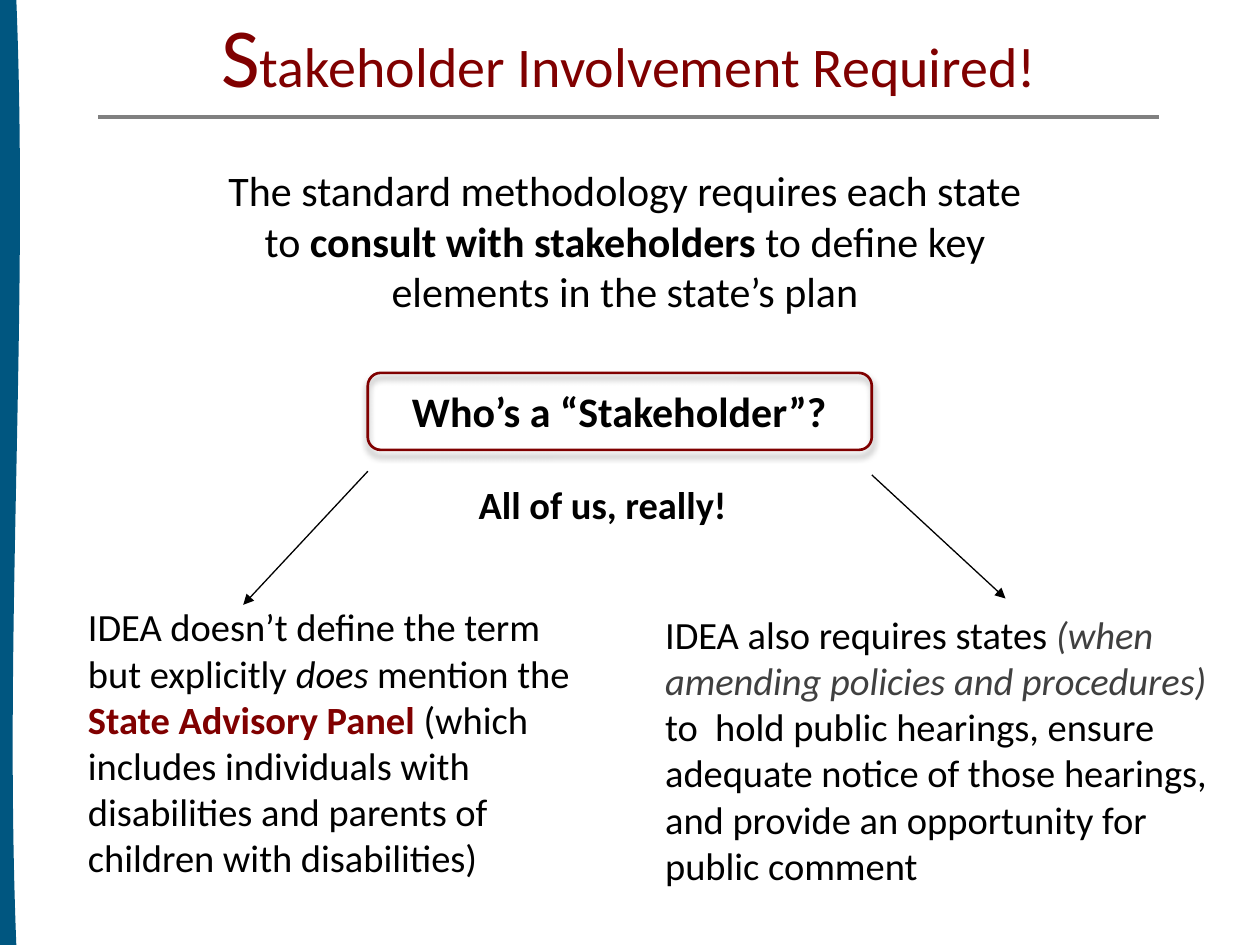
"""Build the slide on stakeholder involvement."""
from dataclasses import dataclass

from pptx import Presentation
from pptx.dml.color import RGBColor as Rgb
from pptx.enum.shapes import MSO_CONNECTOR as Link, MSO_SHAPE as Shape
from pptx.enum.text import MSO_ANCHOR as Anchor, PP_ALIGN as Align
from pptx.oxml import parse_xml
from pptx.oxml.ns import nsdecls, qn
from pptx.util import Pt


@dataclass(frozen=True)
class Theme:
    font: str = "Calibri"
    ink: str = "000000"
    red: str = "800000"
    gray: str = "404040"
    rule: str = "808080"
    blue: str = "005680"
    cap: int = 48
    title: int = 32
    lead: int = 24
    body: int = 22


THEME = Theme()


def make_tag(name, attrs="", inner=""):
    return parse_xml(f'<a:{name} {nsdecls("a")} {attrs}>{inner}</a:{name}>')


def add_run(para, text, size, color=THEME.ink, bold=False, italic=False):
    run = para.add_run()
    run.text = text
    font = run.font
    font.name, font.size = THEME.font, Pt(size)
    font.bold, font.italic = bold, italic
    font.color.rgb = Rgb.from_string(color)


def add_text(slide, place, size, runs, align=Align.LEFT, anchor=Anchor.TOP):
    box = slide.shapes.add_textbox(*map(Pt, place))
    frame = box.text_frame
    frame.word_wrap = True
    frame.vertical_anchor = anchor
    para = frame.paragraphs[0]
    para.alignment = align
    for text, style in runs:
        add_run(para, text, **{"size": size, **style})


def add_line(slide, start, end, color, width, arrow=False):
    line = slide.shapes.add_connector(
        Link.STRAIGHT, *map(Pt, (*start, *end)))
    line.line.color.rgb = Rgb.from_string(color)
    line.line.width = Pt(width)
    if arrow:
        line.line._get_or_add_ln().append(
            make_tag("tailEnd", 'type="triangle"'))
    line.element.spPr.append(make_tag("effectLst"))


def add_frame(slide, place):
    box = slide.shapes.add_shape(Shape.ROUNDED_RECTANGLE, *map(Pt, place))
    box.fill.background()
    box.line.color.rgb = Rgb.from_string(THEME.red)
    box.line.width = Pt(1.5)
    box.shadow.inherit = False
    shade = f'<a:srgbClr val="{THEME.ink}"><a:alpha val="40000"/></a:srgbClr>'
    attrs = (f'blurRad="{Pt(4)}" dist="{Pt(3)}" dir="5400000" '
             'rotWithShape="0"')
    box.element.spPr.find(qn("a:effectLst")).append(
        make_tag("outerShdw", attrs, shade))


def add_wave(slide, place):
    wave = slide.shapes.add_shape(Shape.WAVE, *map(Pt, place))
    wave.rotation = 270
    wave.fill.solid()
    wave.fill.fore_color.rgb = Rgb.from_string(THEME.blue)
    wave.line.fill.background()
    wave.shadow.inherit = False


def main():
    deck = Presentation()
    deck.slide_width, deck.slide_height = Pt(720), Pt(540)
    slide = deck.slides.add_slide(deck.slide_layouts[6])
    bold, red = {"bold": True}, {"color": THEME.red}

    add_wave(slide, (-267.1, 261.4, 540, 17.3))
    add_line(slide, (56.2, 67), (662.4, 67), THEME.rule, 2.25)
    add_text(slide, (65.5, -0.7, 588.2, 62.6), THEME.title, [
        ("S", {"size": THEME.cap, **red}),
        ("takeholder Involvement Required!", red),
    ], Align.CENTER, Anchor.MIDDLE)
    add_text(slide, (120.2, 90.7, 473.8, 94.3), THEME.lead, [
        ("The standard methodology requires each state to ", {}),
        ("consult with stakeholders ", bold),
        ("to define key elements in the state’s plan", {}),
    ], Align.CENTER)
    add_frame(slide, (210.2, 213.1, 288, 44))
    add_text(slide, (117.4, 216.7, 473, 36.7), THEME.lead,
             [("Who’s a “Stakeholder”?", bold)], Align.CENTER)
    add_text(slide, (266.4, 271.4, 185.8, 44), THEME.body,
             [("All of us, really!", bold)])

    for start, end in (((210.2, 269.3), (139, 345.6)),
                       ((498.2, 271.4), (574.6, 342))):
        add_line(slide, start, end, THEME.ink, 0.75, arrow=True)
    add_text(slide, (43.2, 341.3, 300.2, 185.8), THEME.body, [
        ("IDEA doesn’t define the term but explicitly ", {}),
        ("does", {"italic": True}),
        (" mention the ", {}),
        ("State Advisory Panel ", {**bold, **red}),
        ("(which includes individuals with disabilities and parents of "
         "children with disabilities)", {}),
    ])
    add_text(slide, (373, 345.6, 326.2, 167.8), THEME.body, [
        ("IDEA also requires states ", {}),
        ("(when amending policies and procedures)",
         {"color": THEME.gray, "italic": True}),
        (" to  hold public hearings, ensure adequate notice of those "
         "hearings, and provide an opportunity for public comment", {}),
    ])
    deck.save("out.pptx")


if __name__ == "__main__":
    main()
